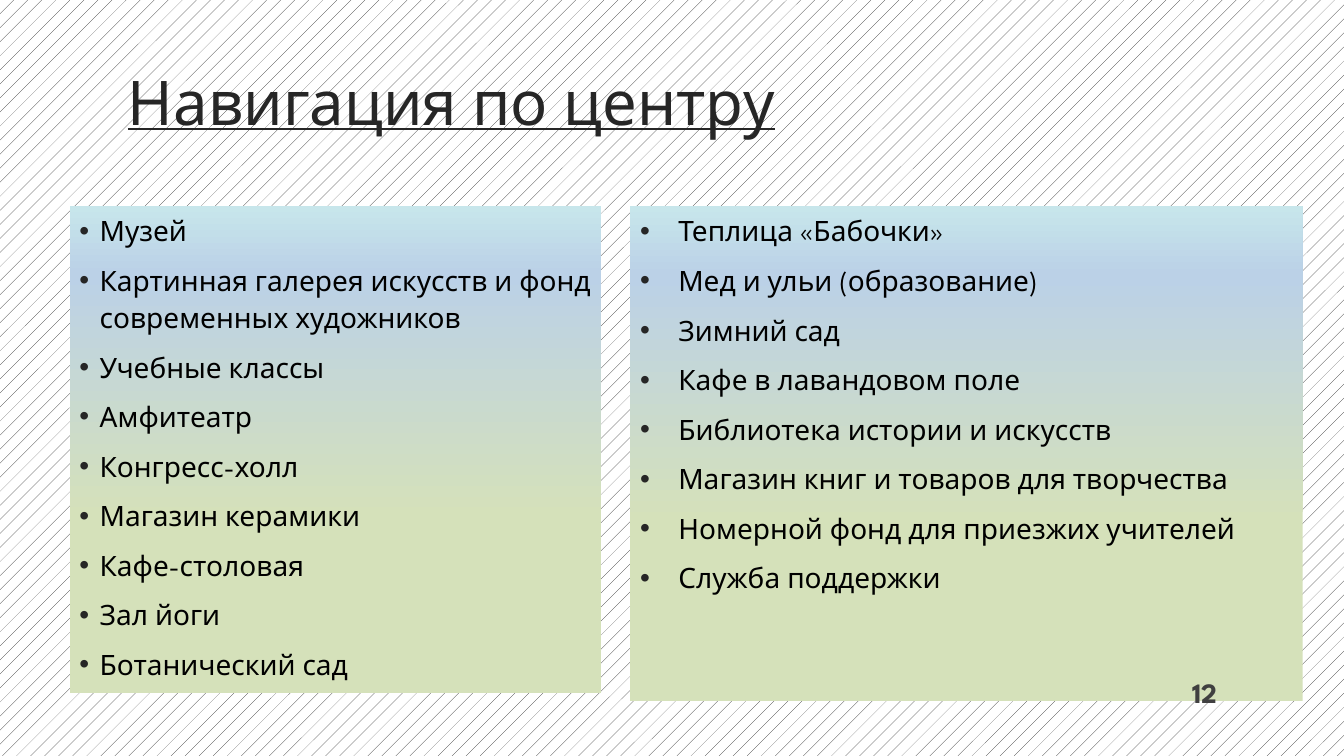
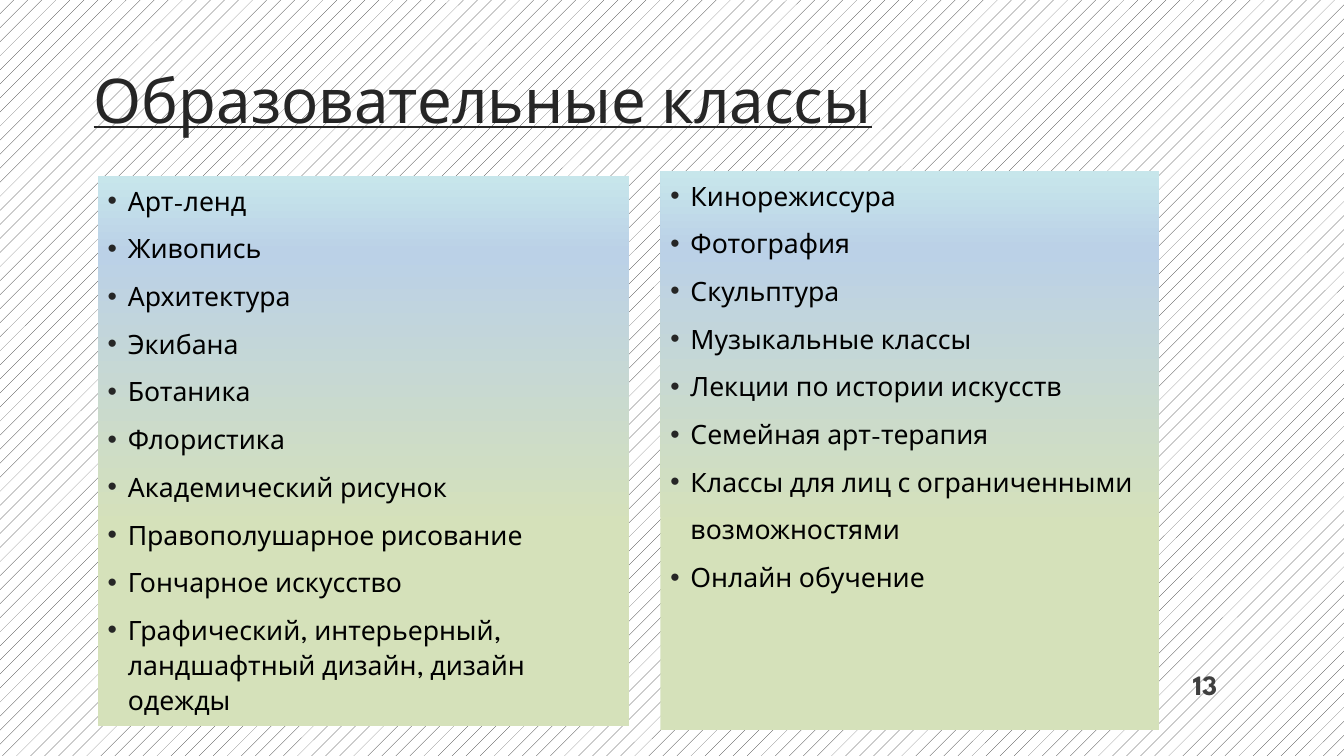
"""Build two slides that list the rooms and classes of an arts centre."""
from copy import deepcopy
from dataclasses import dataclass

from lxml.etree import SubElement
from pptx import Presentation
from pptx.dml.color import RGBColor
from pptx.enum.dml import MSO_PATTERN
from pptx.enum.shapes import MSO_SHAPE
from pptx.enum.text import MSO_ANCHOR, PP_ALIGN
from pptx.oxml.ns import qn
from pptx.util import Inches, Pt

FONT = "League Spartan"
INK = "262626"
PAPER = "FFFFFF"
LIST_INK = "000000"
NUMBER_INK = "404040"
PANEL_STOPS = ((0.36, "D5E1BA"), (0.86, "BBD1E7"), (1.0, "C7E6EB"))


@dataclass(frozen=True)
class Box:
    left: float
    top: float
    width: float
    height: float

    def lengths(self) -> tuple:
        return tuple(Inches(n) for n in (self.left, self.top, self.width, self.height))


@dataclass(frozen=True)
class Panel:
    box: Box
    size: int
    items: tuple[str, ...]
    hang: float = 0.2
    continuations: tuple[str, ...] = ()


@dataclass(frozen=True)
class Page:
    title: str
    title_box: Box
    panels: tuple[Panel, ...]
    number: str
    number_box: Box


PAGES = (
    Page(
        "Навигация по центру",
        Box(1.17, 0.69, 11, 0.71),
        (
            Panel(Box(0.69, 2.04, 5.27, 4.84), 20, (
                "Музей",
                "Картинная галерея искусств и фонд современных художников",
                "Учебные классы",
                "Амфитеатр",
                "Конгресс-холл",
                "Магазин керамики",
                "Кафе-столовая",
                "Зал йоги",
                "Ботанический сад",
            )),
            Panel(Box(6.25, 2.04, 6.67, 4.91), 20, (
                "Теплица «Бабочки»",
                "Мед и ульи (образование)",
                "Зимний сад",
                "Кафе в лавандовом поле",
                "Библиотека истории и искусств",
                "Магазин книг и товаров для творчества",
                "Номерной фонд для приезжих учителей",
                "Служба поддержки",
            ), hang=0.38),
        ),
        "12",
        Box(11.25, 6.68, 0.92, 0.4),
    ),
    Page(
        "Образовательные классы",
        Box(0.83, 0.67, 11, 0.71),
        (
            Panel(Box(0.97, 1.75, 5.27, 5.45), 19, (
                "Арт-ленд",
                "Живопись",
                "Архитектура",
                "Экибана",
                "Ботаника",
                "Флористика",
                "Академический рисунок",
                "Правополушарное рисование",
                "Гончарное искусство",
                "Графический, интерьерный, ландшафтный дизайн, дизайн одежды",
            )),
            Panel(Box(6.55, 1.7, 4.95, 5.54), 19, (
                "Кинорежиссура",
                "Фотография",
                "Скульптура",
                "Музыкальные классы",
                "Лекции по истории искусств",
                "Семейная арт-терапия",
                "Классы для лиц с ограниченными",
                "возможностями",
                "Онлайн обучение",
            ), continuations=("возможностями",)),
        ),
        "13",
        Box(11.25, 6.6, 0.92, 0.4),
    ),
)


def color(value: str) -> RGBColor:
    return RGBColor.from_string(value)


def style_font(paragraph, size: int, ink: str, bold: bool = False, underline: bool = False) -> None:
    font = paragraph.font
    font.name = FONT
    font.size = Pt(size)
    font.bold = bold
    font.underline = underline
    font.color.rgb = color(ink)


def add_line(slide, box: Box, text: str, anchor: MSO_ANCHOR):
    frame = slide.shapes.add_textbox(*box.lengths()).text_frame
    frame.word_wrap = True
    frame.vertical_anchor = anchor
    paragraph = frame.paragraphs[0]
    paragraph.text = text
    return paragraph


def fill_gradient(shape) -> None:
    shape.fill.gradient()
    shape.fill.gradient_angle = 90
    stop_list = shape._element.spPr.find(qn("a:gradFill")).find(qn("a:gsLst"))
    stop_list.append(deepcopy(stop_list[-1]))
    for stop, (position, tint) in zip(shape.fill.gradient_stops, PANEL_STOPS):
        stop.position = position
        stop.color.rgb = color(tint)


def set_indent(paragraph, hang: float, bulleted: bool) -> None:
    properties = paragraph._p.get_or_add_pPr()
    properties.set("marL", str(Inches(hang)))
    properties.set("indent", str(-Inches(hang) if bulleted else 0))
    if bulleted:
        tint = SubElement(properties, qn("a:buClr"))
        SubElement(tint, qn("a:srgbClr"), val=INK)
        SubElement(properties, qn("a:buFont"), typeface="Arial")
        SubElement(properties, qn("a:buChar"), char="•")
    else:
        SubElement(properties, qn("a:buNone"))


def add_panel(slide, panel: Panel) -> None:
    shape = slide.shapes.add_shape(MSO_SHAPE.RECTANGLE, *panel.box.lengths())
    shape.shadow.inherit = False
    shape.line.fill.background()
    fill_gradient(shape)
    frame = shape.text_frame
    frame.word_wrap = True
    frame.vertical_anchor = MSO_ANCHOR.TOP
    for index, item in enumerate(panel.items):
        paragraph = frame.add_paragraph() if index else frame.paragraphs[0]
        paragraph.text = item
        paragraph.alignment = PP_ALIGN.LEFT
        paragraph.line_spacing = 1.1
        paragraph.space_before = Pt(9 if index else 0)
        set_indent(paragraph, panel.hang, item not in panel.continuations)
        style_font(paragraph, panel.size, LIST_INK)


def add_page(deck, page: Page) -> None:
    slide = deck.slides.add_slide(deck.slide_layouts[6])
    backdrop = slide.background.fill
    backdrop.patterned()
    backdrop.pattern = MSO_PATTERN.PERCENT_5
    backdrop.fore_color.rgb = color(INK)
    backdrop.back_color.rgb = color(PAPER)

    title = add_line(slide, page.title_box, page.title, MSO_ANCHOR.MIDDLE)
    title.line_spacing = 0.9
    style_font(title, 44, INK, underline=True)
    for panel in page.panels:
        add_panel(slide, panel)
    number = add_line(slide, page.number_box, page.number, MSO_ANCHOR.BOTTOM)
    number.alignment = PP_ALIGN.RIGHT
    style_font(number, 20, NUMBER_INK, bold=True)


def main() -> None:
    deck = Presentation()
    deck.slide_width = Inches(13.33)
    deck.slide_height = Inches(7.5)
    for page in PAGES:
        add_page(deck, page)
    deck.save("out.pptx")


if __name__ == "__main__":
    main()
